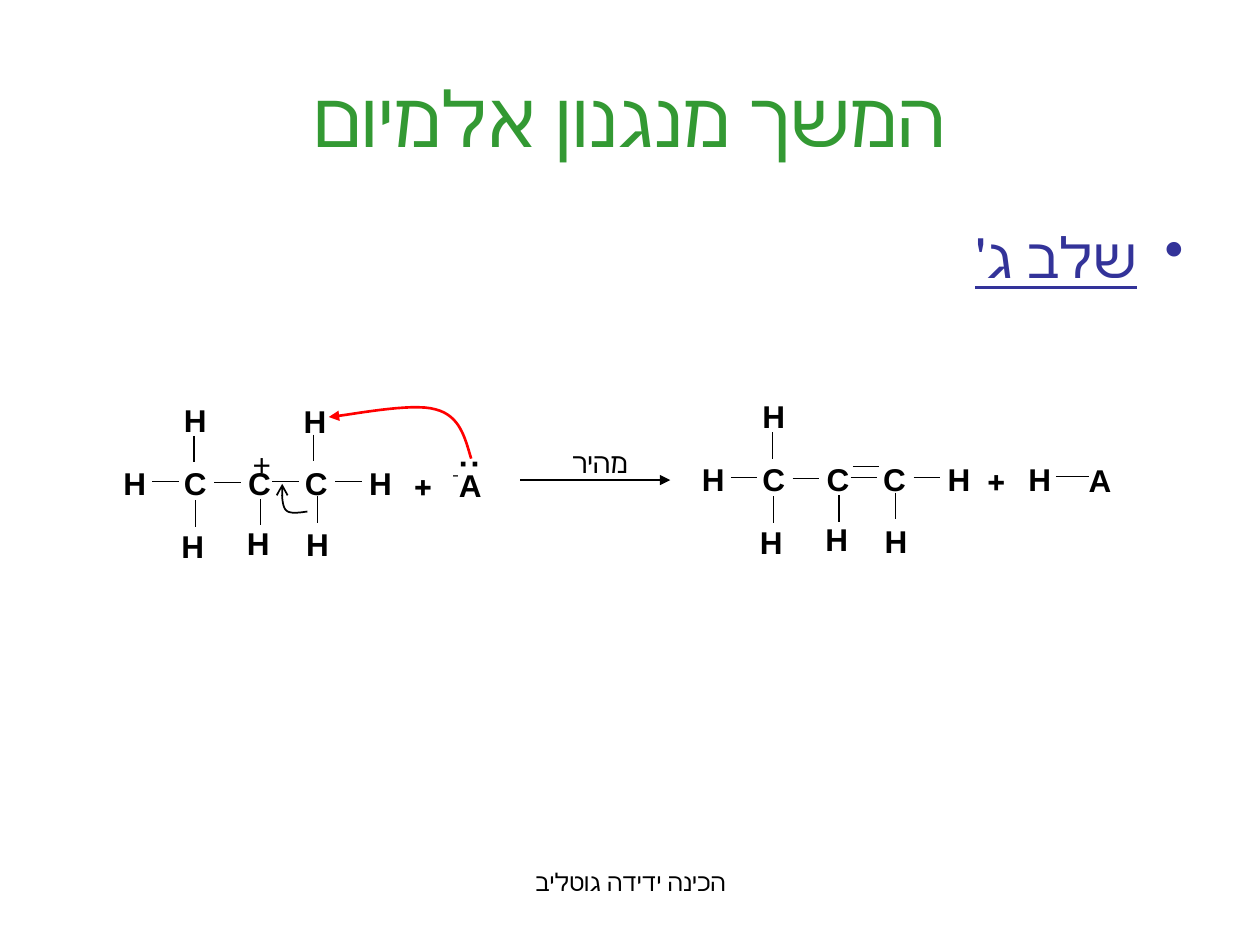
from lxml import etree
from pptx import Presentation
from pptx import util as u
from pptx.dml.color import RGBColor
from pptx.enum import shapes as kinds, text as styles
from pptx.oxml.ns import qn

THEME = dict(font="Arial", title="339933", body="333399", ink="000000", attack="FF0000",
             title_size=44, body_size=32, atom_size=18, label_size=16, footer_size=14)
ALIGN = {"c": styles.PP_ALIGN.CENTER, "r": styles.PP_ALIGN.RIGHT}

# Content: wording
TITLE = "המשך מנגנון אלמיום"
STAGE = "שלב ג'"
FOOTER = "הכינה ידידה גוטליב"
CONDITION = "מהיר"

# Content: three-carbon skeleton, measured from its leftmost hydrogen
ATOM_BOX = (0.38, 0.4)
BOND = 0.21
ATOMS = [("H", 0, 0), ("C", 0.48, 0), ("C", 0.99, 0), ("C", 1.44, 0), ("H", 1.95, 0),
         ("H", 0.48, -0.5), ("H", 0.46, 0.5), ("H", 0.98, 0.48), ("H", 1.45, 0.49)]
FLAT_BONDS = [(0.33, 0.19), (0.82, 0.2), (1.28, 0.19), (1.78, 0.19)]
UPRIGHT_BONDS = [(0.66, -0.17), (0.67, 0.34), (1.19, 0.33), (1.64, 0.31)]

MOLECULES = [
    # cation with one more hydrogen on the third carbon
    dict(origin=(0.88, 3.63), atoms=[("H", 1.43, -0.49)], upright=[(1.61, -0.18)]),
    # alkene with a second bond between the last two carbons
    dict(origin=(5.47, 3.6), flat=[(1.3, 0.1)]),
]

# Content: other symbols as (text, box, format)
SYMBOLS = [
    ("+", (1.87, 3.46, 0.38, 0.4), dict(bold=False)),
    ("+", (2.96, 3.63, 0.57, 0.4), {}),
    ("A", (3.13, 3.65, 0.79, 0.4), dict(superscript="¯")),
    (":", (3.53, 3.52, 0.32, 0.4), dict(rotation=270)),
    (CONDITION, (4.16, 3.49, 0.92, 0.37), dict(size=THEME["label_size"], bold=False)),
    ("+", (7.51, 3.59, 0.57, 0.4), {}),
    ("H", (8.13, 3.6, 0.31, 0.4), {}),
    ("A", (8.46, 3.61, 0.54, 0.4), dict(align="c")),
]

# Content: electron-pair arrows as a start and two cubic curves
ELECTRON_ARROWS = [
    dict(start=(2.44, 4.06), head="arrow", color=THEME["ink"], width=1,
         curves=[((2.37, 4.07), (2.3, 4.08), (2.27, 4.05)),
                 ((2.23, 4.01), (2.24, 3.88), (2.24, 3.84))]),
    dict(start=(3.74, 3.64), head="triangle", color=THEME["attack"], width=1.5,
         curves=[((3.69, 3.47), (3.65, 3.3), (3.46, 3.25)),
                 ((3.27, 3.19), (2.75, 3.3), (2.61, 3.31))]),
]

deck = Presentation()
deck.slide_width, deck.slide_height = u.Inches(10), u.Inches(7.5)
slide = deck.slides.add_slide(deck.slide_layouts[6])


def write(words, box, size=THEME["atom_size"], color=THEME["ink"], align="r", bold=True,
          underline=False, middle=False, bullet=False, superscript="", rotation=0):
    frame_box = slide.shapes.add_textbox(*map(u.Inches, box))
    frame_box.rotation = rotation
    frame = frame_box.text_frame
    frame.word_wrap = True
    if middle:
        frame.vertical_anchor = styles.MSO_ANCHOR.MIDDLE
    paragraph = frame.paragraphs[0]
    paragraph.alignment = ALIGN[align]
    props = paragraph._p.get_or_add_pPr()
    props.set("rtl", "1")
    if bullet:
        props.set("marL", str(u.Inches(0.38)))
        props.set("indent", str(-u.Inches(0.38)))
        etree.SubElement(props, qn("a:buChar")).set("char", "•")
    for part in filter(None, (words, superscript)):
        run = paragraph.add_run()
        run.text = part
        font = run.font
        font.name, font.size = THEME["font"], u.Pt(size)
        font.color.rgb = RGBColor.from_string(color)
        font.underline = underline
        font.bold = bold and part == words
        if part == superscript:
            font._element.set("baseline", "30000")


def style_line(shape, color=THEME["ink"], width=0.75, head=None):
    shape.line.color.rgb = RGBColor.from_string(color)
    shape.line.width = u.Pt(width)
    if head:
        etree.SubElement(shape.line._get_or_add_ln(), qn("a:tailEnd")).set("type", head)


def draw_line(x1, y1, x2, y2, head=None):
    line = slide.shapes.add_connector(kinds.MSO_CONNECTOR.STRAIGHT,
                                      *map(u.Inches, (x1, y1, x2, y2)))
    style_line(line, head=head)
    etree.SubElement(line._element.spPr, qn("a:effectLst"))


def draw_molecule(origin, atoms=(), flat=(), upright=()):
    left, top = origin
    for symbol, x, y in [*ATOMS, *atoms]:
        write(symbol, (left + x, top + y, *ATOM_BOX), align="c")
    for x, y in [*FLAT_BONDS, *flat]:
        draw_line(left + x, top + y, left + x + BOND, top + y)
    for x, y in [*UPRIGHT_BONDS, *upright]:
        draw_line(left + x, top + y, left + x, top + y + BOND)


def curve_points(start, curves, steps=16):
    for first, second, end in curves:
        for step in range(1, steps + 1):
            t = step / steps
            weights = ((1 - t) ** 3, 3 * t * (1 - t) ** 2, 3 * t * t * (1 - t), t ** 3)
            corners = (start, first, second, end)
            yield tuple(u.Inches(sum(w * corner[axis] for w, corner in zip(weights, corners)))
                        for axis in (0, 1))
        start = end


def draw_electron_arrow(start, curves, **line_format):
    builder = slide.shapes.build_freeform(*map(u.Inches, start))
    builder.add_line_segments(list(curve_points(start, curves)), close=False)
    arrow = builder.convert_to_shape()
    arrow.shadow.inherit = False
    arrow.fill.background()
    style_line(arrow, **line_format)


# Title, stage heading and footer
write(TITLE, (0.5, 0.3, 9, 1.25), size=THEME["title_size"], color=THEME["title"],
      align="c", bold=False, middle=True)
write(STAGE, (0.5, 1.72, 9, 4.95), size=THEME["body_size"], color=THEME["body"],
      bold=False, underline=True, bullet=True)
write(FOOTER, (3.42, 6.83, 3.17, 0.52), size=THEME["footer_size"], align="c", bold=False)

# Reaction
for molecule in MOLECULES:
    draw_molecule(**molecule)
for words, box, text_format in SYMBOLS:
    write(words, box, **text_format)
draw_line(4.13, 3.81, 5.32, 3.81, head="triangle")
draw_line(8.38, 3.78, 8.64, 3.78)
for electron_arrow in ELECTRON_ARROWS:
    draw_electron_arrow(**electron_arrow)

deck.save("out.pptx")
